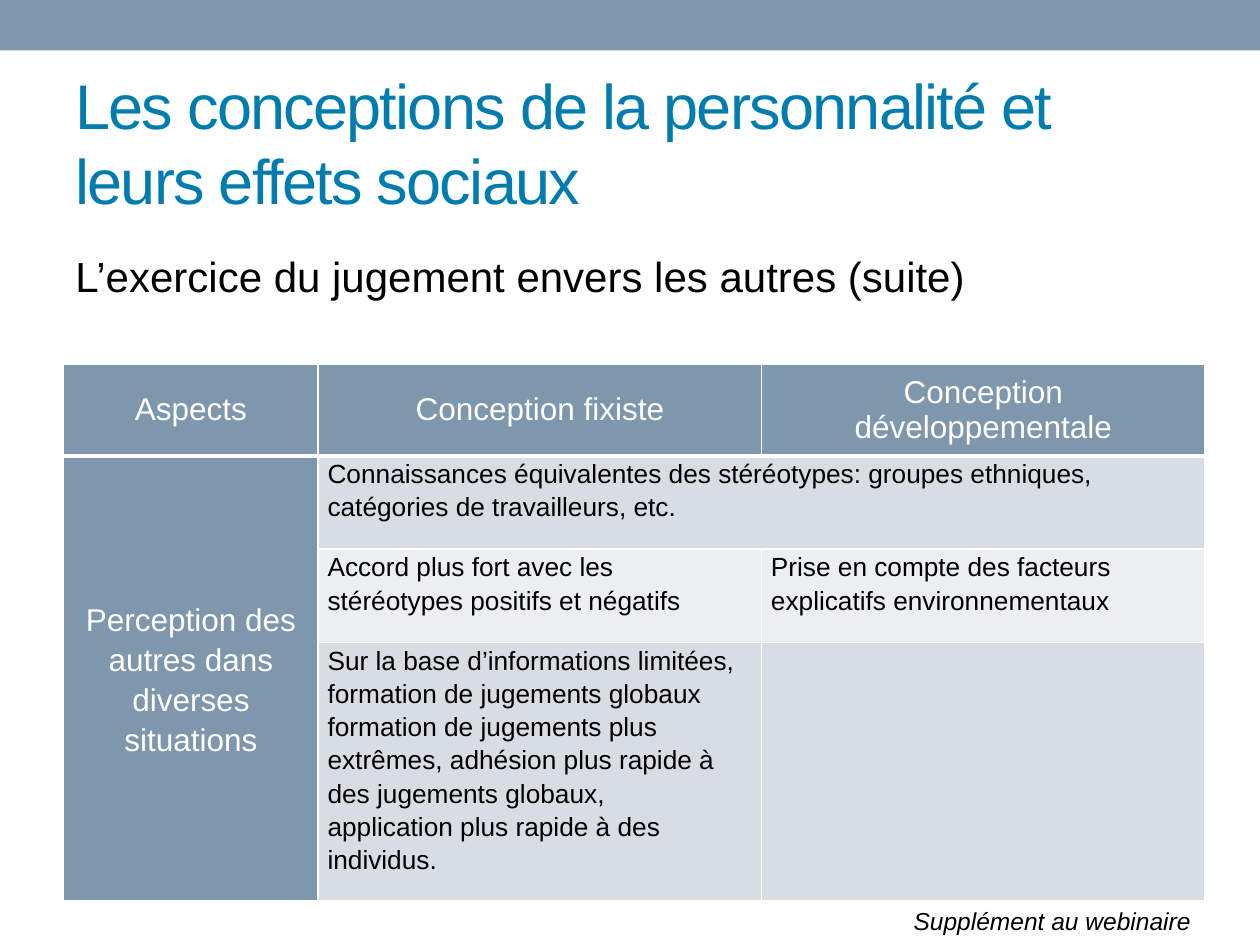
from lxml import etree
from pptx import Presentation
from pptx.dml.color import RGBColor
from pptx.enum.shapes import MSO_SHAPE
from pptx.enum.text import MSO_ANCHOR, PP_ALIGN
from pptx.oxml.ns import qn
from pptx.util import Pt

FONT = "Arial"
WHITE = RGBColor(0xFF, 0xFF, 0xFF)
BLACK = RGBColor(0, 0, 0)
SLATE = RGBColor(0x7E, 0x97, 0xAD)
BLUE = RGBColor(0x00, 0x7C, 0xAF)
GREY = RGBColor(0xD8, 0xDD, 0xE3)
PALE = RGBColor(0xEC, 0xEF, 0xF1)

TITLE = "Les conceptions de la personnalité et leurs effets sociaux"
TOPIC = "L’exercice du jugement envers les autres (suite)"
NOTE = "Supplément au webinaire"

HEADS = ["Aspects", "Conception fixiste", "Conception développementale"]
ASPECT = "Perception des autres dans diverses situations"
# Each body row: fill, then the paragraphs of its two right-hand cells
BODY = [
    (GREY, ["Connaissances équivalentes des stéréotypes: groupes ethniques, "
            "catégories de travailleurs, etc."], []),
    (PALE, ["Accord plus fort avec les stéréotypes positifs et négatifs"],
     ["Prise en compte des facteurs explicatifs environnementaux"]),
    (GREY, ["Sur la base d’informations limitées,",
            "formation de jugements globaux",
            "formation de jugements plus extrêmes, adhésion plus rapide "
            "à des jugements globaux,",
            "application plus rapide à des individus."], []),
]
COLS = [145.4, 253.4, 253.4]
ROWS = [52.5, 53.3, 53.3, 147.5]


def write(frame, lines, size, color, align=PP_ALIGN.LEFT, lead=None):
    """Put one run per paragraph and return the last run."""
    for i, line in enumerate(lines):
        para = frame.add_paragraph() if i else frame.paragraphs[0]
        para.alignment = align
        if lead:
            para.line_spacing = lead
        run = para.add_run()
        run.text = line
        run.font.name = FONT
        run.font.size = Pt(size)
        run.font.color.rgb = color
    return run


def add_text(slide, box, text, size, color, **style):
    shape = slide.shapes.add_textbox(*map(Pt, box))
    shape.text_frame.word_wrap = True
    return shape, write(shape.text_frame, [text], size, color, **style)


def set_edges(cell, foot):
    """White borders of 1 pt, with the bottom one `foot` points wide."""
    props = cell._tc.get_or_add_tcPr()
    for i, (side, width) in enumerate(
            [("lnL", 1), ("lnR", 1), ("lnT", 1), ("lnB", foot)]):
        line = etree.Element(qn("a:" + side), w=str(Pt(width)))
        fill = etree.SubElement(line, qn("a:solidFill"))
        etree.SubElement(fill, qn("a:srgbClr"), val=str(WHITE))
        props.insert(i, line)


def fill_cell(cell, lines, size, color, fill, body=True, **style):
    cell.fill.solid()
    cell.fill.fore_color.rgb = fill
    if body:
        cell.margin_left = cell.margin_right = Pt(5.4)
        cell.margin_top = cell.margin_bottom = 0
        style["lead"] = 1.14
    if lines:
        write(cell.text_frame, lines, size, color, **style)


def add_grid(slide):
    grid = slide.shapes.add_table(
        len(ROWS), len(COLS), Pt(36.4), Pt(208), Pt(sum(COLS)),
        Pt(sum(ROWS))).table
    for col, width in zip(grid.columns, COLS):
        col.width = Pt(width)
    for row, height in zip(grid.rows, ROWS):
        row.height = Pt(height)

    for c, head in enumerate(HEADS):
        cell = grid.cell(0, c)
        cell.vertical_anchor = MSO_ANCHOR.MIDDLE
        fill_cell(cell, [head], 18, WHITE, SLATE, body=False,
                  align=PP_ALIGN.CENTER)
    for r, (fill, *pair) in enumerate(BODY, 1):
        fill_cell(grid.cell(r, 0), [ASPECT] if r == 1 else [], 18, WHITE,
                  SLATE, align=PP_ALIGN.CENTER)
        for c, lines in enumerate(pair, 1):
            fill_cell(grid.cell(r, c), lines, 15, BLACK, fill)
    for r in range(len(ROWS)):
        for c in range(len(COLS)):
            set_edges(grid.cell(r, c), 1 if r else 3)

    grid.cell(1, 0).vertical_anchor = MSO_ANCHOR.MIDDLE
    grid.cell(1, 0).merge(grid.cell(3, 0))
    grid.cell(1, 1).merge(grid.cell(1, 2))


def main():
    deck = Presentation()
    deck.slide_width, deck.slide_height = Pt(720), Pt(540)
    slide = deck.slides.add_slide(deck.slide_layouts[6])

    band = slide.shapes.add_shape(MSO_SHAPE.RECTANGLE, 0, 0, Pt(720), Pt(28.8))
    band.shadow.inherit = False
    band.fill.solid()
    band.fill.fore_color.rgb = SLATE
    band.line.fill.background()

    title, run = add_text(slide, (36, 42, 648, 78), TITLE, 36, BLUE)
    title.text_frame.vertical_anchor = MSO_ANCHOR.MIDDLE
    run.font._element.set("spc", "-100")

    add_text(slide, (36, 139.7, 648, 383.8), TOPIC, 24, BLACK)
    add_grid(slide)
    note, run = add_text(slide, (251.3, 514, 436.3, 24.2), NOTE, 14, BLACK,
                         align=PP_ALIGN.RIGHT)
    run.font.italic = True

    deck.save("out.pptx")


if __name__ == "__main__":
    main()
